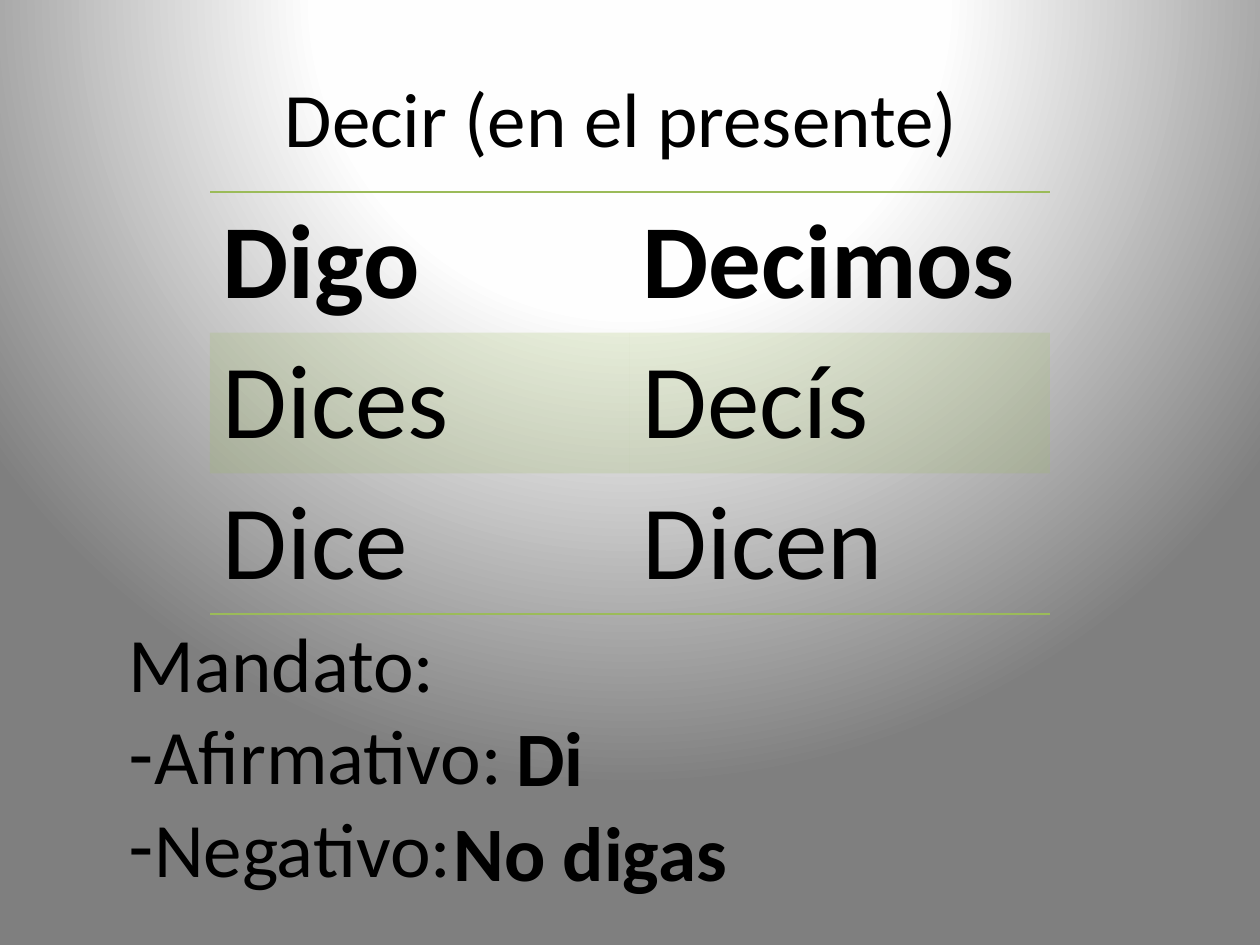
from lxml import etree
from pptx import Presentation
from pptx import util as u
from pptx.dml.color import RGBColor
from pptx.enum import text
from pptx.oxml import ns, parse_xml

BLACK = RGBColor(0x00, 0x00, 0x00)
GREEN = RGBColor(0x9B, 0xBB, 0x59)
BACKDROP = [(0, "FFFFFF"), (40, "FEFEFE"), (100, "7F7F7F")]
FORMS = [("Digo", "Decimos"), ("Dices", "Decís"), ("Dice", "Dicen")]
RULED_EDGES = [("lnT", "lnB"), (), ("lnB",)]
COMMANDS = [("Mandato:", False), ("Afirmativo:", True), ("Negativo:", True)]
ANSWERS = [("Di", (504, 703, 136, 106)), ("No digas", (441, 798, 357, 106))]


def px(length):
    """Turn pixels into EMU."""
    return u.Emu(round(length * 914400 / 126))


def place(part, box):
    """Move a part to its box."""
    for side, length in zip(("left", "top", "width", "height"), box):
        setattr(part, side, px(length))


def write(paragraph, words, size=44, bold=False):
    """Write one formatted run into a paragraph."""
    run = paragraph.add_run()
    run.text = words
    for name, value in {"name": "Calibri", "size": u.Pt(size), "bold": bold}.items():
        setattr(run.font, name, value)
    run.font.color.rgb = BLACK


def paint_background(slide):
    """Fill the slide with a round gradient centred above its top edge."""
    stops = "".join(
        f'<a:gs pos="{pos * 1000}"><a:srgbClr val="{tone}"/></a:gs>'
        for pos, tone in BACKDROP
    )
    slide.background.fill.solid()
    solid = slide.background.fill._xPr.find(ns.qn("a:solidFill"))
    gradient = parse_xml(
        f'<a:gradFill {ns.nsdecls("a")} rotWithShape="1"><a:gsLst>{stops}</a:gsLst>'
        '<a:path path="circle"><a:fillToRect l="50000" t="-80000" r="50000" '
        'b="180000"/></a:path></a:gradFill>'
    )
    solid.getparent().replace(solid, gradient)


def add_title(slide, box):
    """Place the heading in the title placeholder."""
    title = slide.shapes.title
    place(title, box)
    title.text_frame.vertical_anchor = text.MSO_ANCHOR.MIDDLE
    heading = title.text_frame.paragraphs[0]
    heading.alignment = text.PP_ALIGN.CENTER
    write(heading, "Decir (en el presente) ")


def rule_cell(cell, ruled):
    """Draw green lines on the ruled edges and clear the others."""
    properties = cell._tc.get_or_add_tcPr()
    for edge in ("lnL", "lnR", "lnT", "lnB"):
        line = etree.SubElement(properties, ns.qn(f"a:{edge}"), w=str(u.Pt(1)))
        if edge in ruled:
            solid = etree.SubElement(line, ns.qn("a:solidFill"))
            etree.SubElement(solid, ns.qn("a:srgbClr"), val=str(GREEN))
        else:
            etree.SubElement(line, ns.qn("a:noFill"))


def shade_cell(cell, shaded):
    """Give the cell a pale green tint or no fill."""
    if not shaded:
        cell.fill.background()
        return
    cell.fill.solid()
    cell.fill.fore_color.rgb = GREEN
    tint = cell._tc.tcPr.find(f'{ns.qn("a:solidFill")}/{ns.qn("a:srgbClr")}')
    etree.SubElement(tint, ns.qn("a:alpha"), val="20000")


def add_conjugation(slide, box):
    """Add the table of present tense forms."""
    frame = slide.shapes.add_table(len(FORMS), 2, *map(px, box))
    for row, (forms, ruled) in enumerate(zip(FORMS, RULED_EDGES)):
        for column, form in enumerate(forms):
            cell = frame.table.cell(row, column)
            write(cell.text_frame.paragraphs[0], form, 60, row == 0)
            rule_cell(cell, ruled)
            shade_cell(cell, row == 1)


def add_commands(slide, box):
    """List the command forms in the body placeholder."""
    body = slide.placeholders[1]
    place(body, box)
    frame = body.text_frame
    frame.auto_size = text.MSO_AUTO_SIZE.NONE
    for index, (label, dashed) in enumerate(COMMANDS):
        paragraph = frame.add_paragraph() if index else frame.paragraphs[0]
        paragraph.space_before = u.Pt(0)
        properties = paragraph._p.get_or_add_pPr()
        for name in ("marL", "indent"):
            properties.set(name, "0")
        if dashed:
            etree.SubElement(properties, ns.qn("a:buFontTx"))
            etree.SubElement(properties, ns.qn("a:buChar"), char="-")
        else:
            etree.SubElement(properties, ns.qn("a:buNone"))
        write(paragraph, label)


def add_answer(slide, answer, box):
    """Add one bold command beside its label."""
    frame = slide.shapes.add_textbox(*map(px, box)).text_frame
    frame.word_wrap = True
    frame.auto_size = text.MSO_AUTO_SIZE.SHAPE_TO_FIT_TEXT
    write(frame.paragraphs[0], answer, bold=True)


def main():
    """Build and save the slide."""
    deck = Presentation()
    deck.slide_width, deck.slide_height = px(1260), px(945)
    slide = deck.slides.add_slide(deck.slide_layouts[1])
    paint_background(slide)
    add_title(slide, (63, 38, 1134, 158))
    add_conjugation(slide, (210, 192, 840, 422))
    add_commands(slide, (116, 609, 1029, 292))
    for answer, box in ANSWERS:
        add_answer(slide, answer, box)
    deck.save("out.pptx")


if __name__ == "__main__":
    main()
